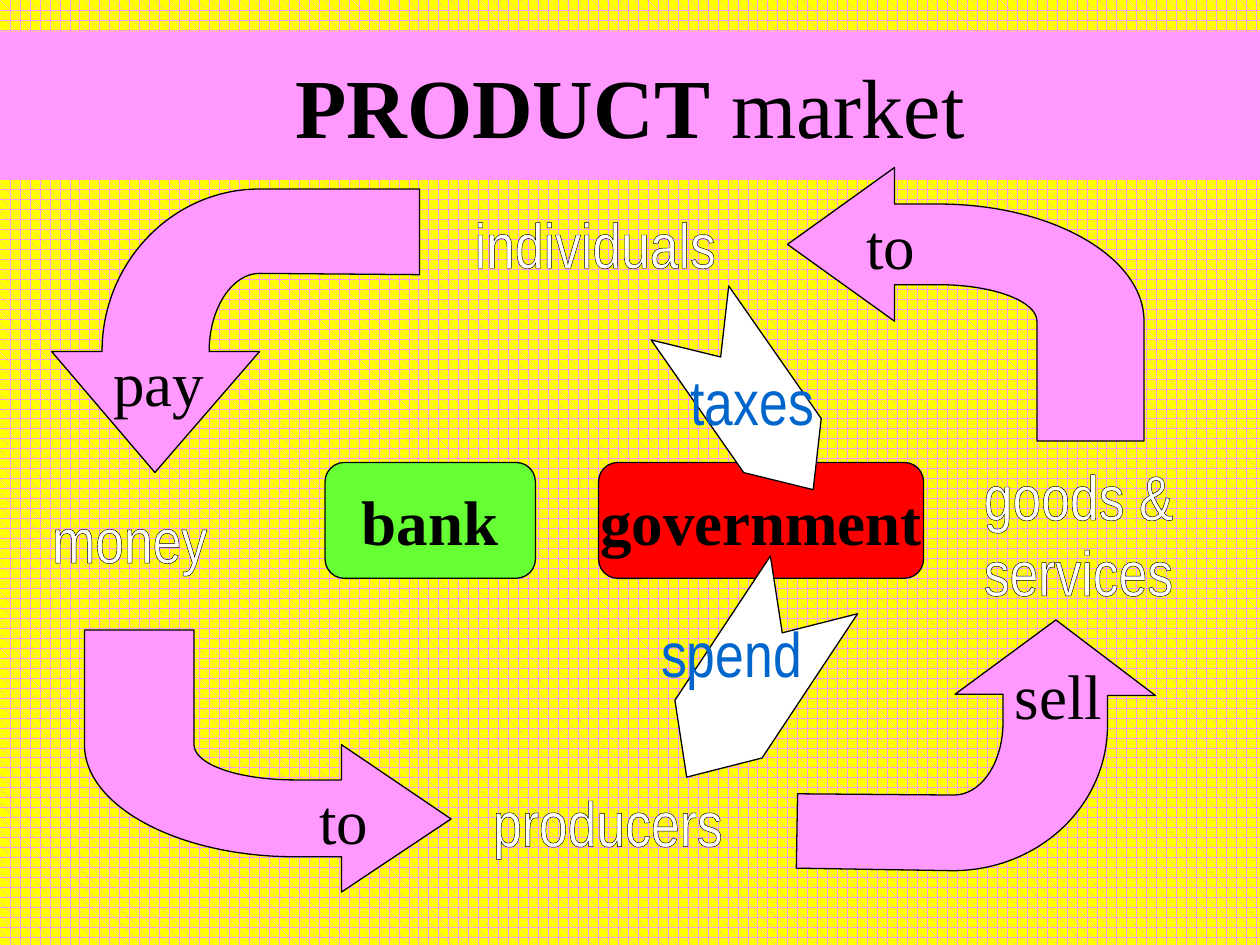
"""Build a circular-flow slide of the product market."""
from dataclasses import dataclass

import pptx
import pptx.dml.color
import pptx.enum.dml
import pptx.enum.shapes
import pptx.enum.text
import pptx.oxml
import pptx.oxml.ns
import pptx.util
from pptx.util import Inches

PINK, YELLOW, WHITE, BLACK = "FF99FF", "FFFF00", "FFFFFF", "000000"
SHAPES = pptx.enum.shapes.MSO_SHAPE
ANCHOR = pptx.enum.text.MSO_ANCHOR
SERIF = {"name": "Times New Roman", "size": pptx.util.Pt(36), "bold": False}
BOLD = {**SERIF, "bold": True}
NARROW = {**SERIF, "name": "Arial Narrow"}
TITLE = {**SERIF, "size": pptx.util.Pt(48)}


@dataclass
class Arrow:
    """Bent arrow: two-number steps are lines, six-number steps are curves."""
    text: str
    center: tuple
    steps: list


@dataclass
class Label:
    """Unwrapped text with an outline colour."""
    text: str
    box: tuple
    color: str = WHITE
    outline: str = BLACK


@dataclass
class Block:
    """Preset shape with an optional bold caption."""
    kind: int
    box: tuple
    fill: str
    adj: float
    rotation: float = 0
    text: str = ""


ARROWS = [
    Arrow("sell", (8.4, 5.51), [
        (8.38, 4.92), (9.17, 5.52), (8.79, 5.52), (8.79, 5.77),
        (8.78, 6.41, 8.23, 6.91, 7.56, 6.91), (6.32, 6.89), (6.33, 6.3),
        (7.57, 6.31), (7.78, 6.31, 7.95, 6.07, 7.96, 5.76), (7.96, 5.51),
        (7.58, 5.51)]),
    Arrow("to", (7.07, 1.94), [
        (6.25, 1.94), (7.1, 1.33), (7.1, 1.62), (7.45, 1.62),
        (8.35, 1.62, 9.08, 2.04, 9.08, 2.55), (9.08, 3.5), (8.23, 3.5),
        (8.23, 2.55), (8.23, 2.39, 7.88, 2.26, 7.45, 2.26), (7.1, 2.26),
        (7.1, 2.55)]),
    Arrow("to", (2.73, 6.5), [
        (3.58, 6.5), (2.71, 7.08), (2.71, 6.8), (2.34, 6.8),
        (1.42, 6.8, 0.67, 6.4, 0.67, 5.91), (0.67, 5), (1.54, 5),
        (1.54, 5.91), (1.54, 6.07, 1.9, 6.19, 2.34, 6.19), (2.71, 6.19),
        (2.71, 5.91)]),
    Arrow("pay", (1.26, 3.03), [
        (1.23, 3.75), (0.41, 2.79), (0.81, 2.79),
        (0.81, 2.08, 1.37, 1.5, 2.06, 1.5), (3.33, 1.5), (3.33, 2.18),
        (2.06, 2.17), (1.84, 2.17, 1.66, 2.45, 1.66, 2.79), (2.06, 2.79)]),
]
LABELS = [
    Label("individuals", (3.58, 1.58, 2.29, 0.62)),
    Label("money", (0.33, 3.92, 1.4, 0.62)),
    Label("producers", (3.75, 6.17, 2.15, 0.62)),
    Label("goods &\nservices", (7.67, 3.58, 1.78, 1.25)),
]
BLOCKS = [
    Block(SHAPES.ROUNDED_RECTANGLE, (2.58, 3.67, 1.67, 0.92), "66FF33", 0.167, text="bank"),
    Block(SHAPES.ROUNDED_RECTANGLE, (4.75, 3.67, 2.58, 0.92), "FF0000", 0.167, text="government"),
    Block(SHAPES.CHEVRON, (5.11, 2.81, 1.71, 0.75), WHITE, 0.568, 55.1),
    Block(SHAPES.CHEVRON, (5.04, 4.99, 1.83, 0.83), WHITE, 0.55, 123.5),
]
FLOWS = [
    Label("taxes", (5.17, 2.83, 1.6, 0.62), "0066CC", "99CCFF"),
    Label("spend", (5.08, 4.83, 1.45, 0.79), "0066CC", "99CCFF"),
]


def rgb(color: str) -> pptx.dml.color.RGBColor:
    """Turn a hex string into a colour."""
    return pptx.dml.color.RGBColor.from_string(color)


def add_run(p, text: str, fmt: dict, color: str = BLACK):
    """Append a formatted run to a paragraph."""
    r = p.add_run()
    r.text = text
    for key, value in fmt.items():
        setattr(r.font, key, value)
    r.font.color.rgb = rgb(color)
    return r


def setup_text(sp, anchor, wrap: bool = False):
    """Set the frame's anchor and wrap and return its centred first paragraph."""
    tf = sp.text_frame
    tf.word_wrap = wrap
    tf.vertical_anchor = anchor
    tf.margin_left = tf.margin_right = 0
    p = tf.paragraphs[0]
    p.alignment = pptx.enum.text.PP_ALIGN.CENTER
    return p


def paint(sp, fill: str, line: bool = True) -> None:
    """Give a shape a flat fill and a thin black line or none."""
    sp.shadow.inherit = False
    sp.fill.solid()
    sp.fill.fore_color.rgb = rgb(fill)
    if line:
        sp.line.color.rgb = rgb(BLACK)
        sp.line.width = pptx.util.Pt(0.75)
    else:
        sp.line.fill.background()


def bend(sp, steps: list) -> None:
    """Merge the three segments of each six-number step into a cubic curve."""
    segments = iter(list(sp._element.iter(pptx.oxml.ns.qn("a:lnTo"))))
    for step in steps:
        first = next(segments)
        if len(step) == 2:
            continue
        curve = pptx.oxml.parse_xml(f'<a:cubicBezTo {pptx.oxml.ns.nsdecls("a")}/>')
        first.addprevious(curve)
        for segment in (first, next(segments), next(segments)):
            curve.append(segment[0])
            segment.getparent().remove(segment)


def add_arrow(s, arrow: Arrow) -> None:
    """Draw a bent arrow with the word on its head."""
    points = [(Inches(step[i]), Inches(step[i + 1]))
              for step in arrow.steps for i in range(0, len(step), 2)]
    builder = s.shapes.build_freeform(*points[0])
    builder.add_line_segments(points[1:], close=True)
    sp = builder.convert_to_shape()
    bend(sp, arrow.steps[1:])
    paint(sp, PINK)
    add_run(setup_text(sp, ANCHOR.MIDDLE), arrow.text, SERIF)
    x, y = map(Inches, arrow.center)
    dx, dy = 2 * x - 2 * sp.left - sp.width, 2 * y - 2 * sp.top - sp.height
    margins = {"margin_left": dx, "margin_right": -dx, "margin_top": dy, "margin_bottom": -dy}
    for key, value in margins.items():
        setattr(sp.text_frame, key, max(0, value))


def add_label(s, label: Label) -> None:
    """Draw outlined text, one paragraph a line."""
    sp = s.shapes.add_textbox(*map(Inches, label.box))
    p = setup_text(sp, ANCHOR.TOP)
    for i, text in enumerate(label.text.split("\n")):
        if i:
            p = sp.text_frame.add_paragraph()
            p.alignment = pptx.enum.text.PP_ALIGN.CENTER
        r = add_run(p, text, NARROW, label.color)
        r.font._element.insert(0, pptx.oxml.parse_xml(
            f'<a:ln {pptx.oxml.ns.nsdecls("a")} w="19050"><a:solidFill>'
            f'<a:srgbClr val="{label.outline}"/></a:solidFill></a:ln>'))


def add_block(s, block: Block) -> None:
    """Draw a preset shape with its caption."""
    sp = s.shapes.add_shape(block.kind, *map(Inches, block.box))
    sp.adjustments[0] = block.adj
    sp.rotation = block.rotation
    paint(sp, block.fill)
    if block.text:
        add_run(setup_text(sp, ANCHOR.MIDDLE), block.text, BOLD)


def main() -> None:
    """Build and save the slide."""
    prs = pptx.Presentation()
    prs.slide_width, prs.slide_height = Inches(10), Inches(7.5)
    s = prs.slides.add_slide(prs.slide_layouts[6])
    fill = s.background.fill
    fill.patterned()
    fill.pattern = pptx.enum.dml.MSO_PATTERN.PLAID
    fill.fore_color.rgb, fill.back_color.rgb = rgb(PINK), rgb(YELLOW)

    sp = s.shapes.add_shape(SHAPES.RECTANGLE, 0, Inches(0.25), Inches(10), Inches(1.17))
    paint(sp, PINK, line=False)
    p = setup_text(sp, ANCHOR.MIDDLE, wrap=True)
    add_run(p, "PRODUCT", {**TITLE, "bold": True})
    add_run(p, " market", TITLE)

    for draw, items in ((add_arrow, ARROWS), (add_label, LABELS),
                        (add_block, BLOCKS), (add_label, FLOWS)):
        for item in items:
            draw(s, item)
    prs.save("out.pptx")


if __name__ == "__main__":
    main()
